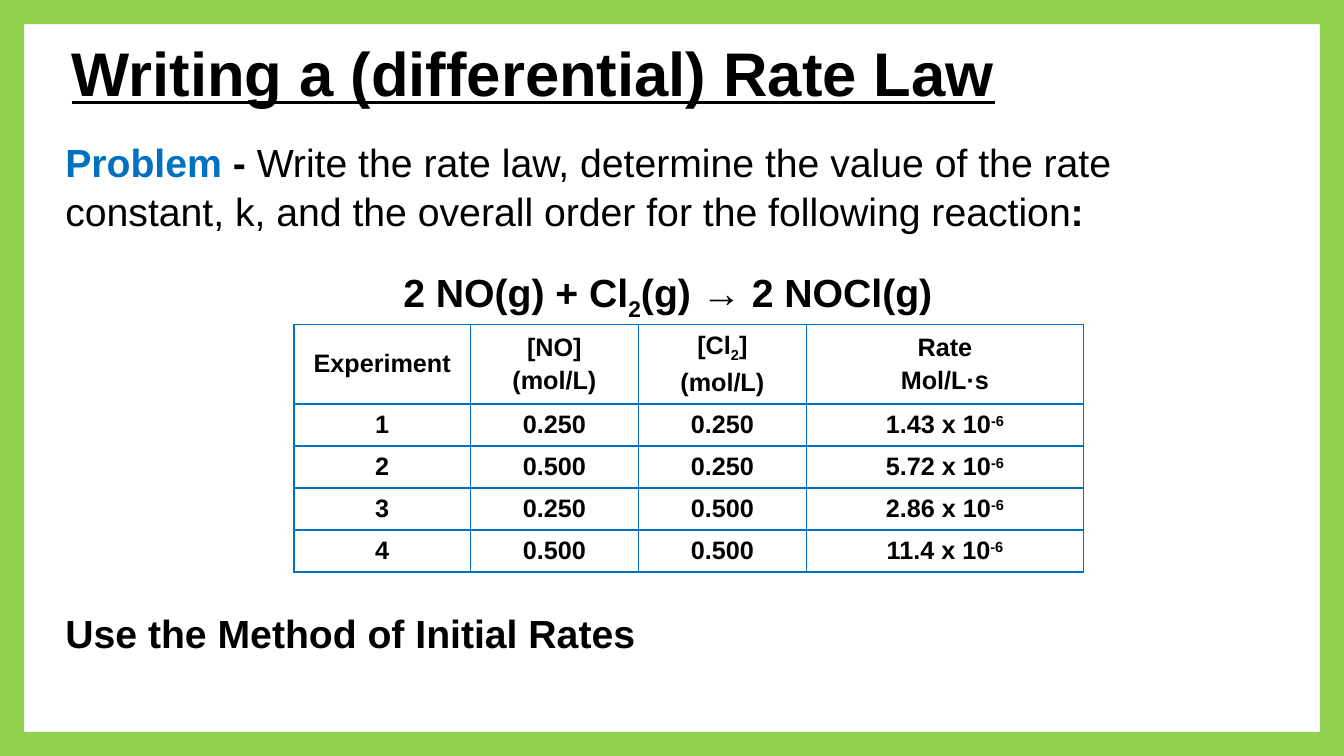
from dataclasses import dataclass

from lxml.etree import SubElement
from pptx import Presentation
from pptx.dml.color import RGBColor
from pptx.enum.shapes import MSO_SHAPE
from pptx.enum.text import MSO_ANCHOR, PP_ALIGN
from pptx.oxml.ns import qn
from pptx.util import Pt


@dataclass(frozen=True)
class Theme:
    font: str = "Arial"
    ink: str = "000000"
    accent: str = "0070C0"
    frame: str = "92D050"
    title_size: int = 44
    body_size: int = 28
    table_size: int = 18
    subscript: int = -25000
    superscript: int = 30000


def assign(target, values):
    for name, value in values.items():
        setattr(target, name, value)


class SlideBuilder:
    def __init__(self, deck, theme):
        self.theme = theme
        self.page = deck.slides.add_slide(deck.slide_layouts[5])

    def fill_paragraph(self, para, spans, size, align=PP_ALIGN.LEFT, **spacing):
        assign(para, dict(alignment=align, **spacing))
        for text, look in spans:
            span = para.add_run()
            span.text = text
            assign(span.font, dict(name=self.theme.font, size=Pt(size),
                                   bold=look.get("bold", True),
                                   underline=look.get("underline", False)))
            span.font.color.rgb = RGBColor.from_string(look.get("color", self.theme.ink))
            if "baseline" in look:
                span.font._element.set("baseline", str(look["baseline"]))

    def title(self, text, left, top, width, height):
        title = self.page.shapes.title
        assign(title, dict(left=Pt(left), top=Pt(top), width=Pt(width), height=Pt(height)))
        assign(title.text_frame, dict(word_wrap=True, vertical_anchor=MSO_ANCHOR.MIDDLE))
        self.fill_paragraph(title.text_frame.paragraphs[0], [(text, dict(underline=True))],
                            self.theme.title_size)

    def text(self, spans, *bounds, align=PP_ALIGN.LEFT):
        box = self.page.shapes.add_textbox(*map(Pt, bounds))
        box.text_frame.word_wrap = True
        self.fill_paragraph(box.text_frame.paragraphs[0], spans, self.theme.body_size, align,
                            line_spacing=1.05)

    def frame(self, width, height, thickness):
        shape = self.page.shapes.add_shape(MSO_SHAPE.FRAME, 0, 0, Pt(width), Pt(height))
        shape.adjustments[0] = thickness
        shape.shadow.inherit = False
        shape.fill.solid()
        shape.fill.fore_color.rgb = RGBColor.from_string(self.theme.frame)
        shape.line.fill.background()

    def border(self, cell):
        properties = cell._tc.get_or_add_tcPr()
        for position, side in enumerate(("a:lnL", "a:lnR", "a:lnT", "a:lnB")):
            line = SubElement(properties, qn(side), w=str(Pt(1)))
            fill = SubElement(line, qn("a:solidFill"))
            SubElement(fill, qn("a:srgbClr"), val=self.theme.accent)
            properties.insert(position, line)

    def table(self, rows, left, top, widths, heights):
        shape = self.page.shapes.add_table(len(rows), len(widths), Pt(left), Pt(top),
                                           Pt(sum(widths)), Pt(sum(heights)))
        table = shape.table
        assign(table, dict(first_row=False, horz_banding=False))
        for column, width in zip(table.columns, widths):
            column.width = Pt(width)
        for row, height, contents in zip(table.rows, heights, rows):
            row.height = Pt(height)
            for cell, lines in zip(row.cells, contents):
                cell.vertical_anchor = MSO_ANCHOR.MIDDLE
                cell.fill.background()
                self.border(cell)
                for index, spans in enumerate(lines):
                    frame = cell.text_frame
                    para = frame.add_paragraph() if index else frame.paragraphs[0]
                    self.fill_paragraph(para, spans, self.theme.table_size, PP_ALIGN.CENTER,
                                        space_before=Pt(3.6 if index else 0))


def main():
    deck = Presentation()
    assign(deck, dict(slide_width=Pt(960), slide_height=Pt(540)))
    theme = Theme()
    slide = SlideBuilder(deck, theme)
    below = dict(baseline=theme.subscript)
    above = dict(baseline=theme.superscript)

    slide.text([("Problem ", dict(color=theme.accent)), ("- ", {}),
                ("Write the rate law, determine the value of the rate constant, k, "
                 "and the overall order for the following reaction", dict(bold=False)),
                (":", {})], 39.6, 93.6, 876, 75)
    slide.text([("Use the Method of Initial Rates", {})], 39.6, 430, 876, 41)
    slide.text([("2 NO(g) + Cl", {}), ("2", below), ("(g) → 2 NOCl(g)", {})],
               252, 186, 450, 41, align=PP_ALIGN.CENTER)

    unit = [("(mol/L)", {})]
    header = [
        [[("Experiment", {})]],
        [[("[NO]", {})], unit],
        [[("[Cl", {}), ("2", below), ("]", {})], unit],
        [[("Rate", {})], [("Mol/L·s", {})]],
    ]
    trials = [
        ("0.250", "0.250", "1.43"),
        ("0.500", "0.250", "5.72"),
        ("0.250", "0.500", "2.86"),
        ("0.500", "0.500", "11.4"),
    ]
    rows = [header]
    for number, (nitric_oxide, chlorine, rate) in enumerate(trials, 1):
        plain = [[[(value, {})]] for value in (str(number), nitric_oxide, chlorine)]
        rows.append(plain + [[[(f"{rate} x 10", {}), ("-6", above)]]])
    slide.table(rows, 210, 231.6, [126, 120, 120, 198], [57] + [30] * len(trials))

    slide.frame(960, 540, 0.032)
    slide.title("Writing a (differential) Rate Law", 44, 16.6, 760, 69)
    deck.save("out.pptx")


if __name__ == "__main__":
    main()
